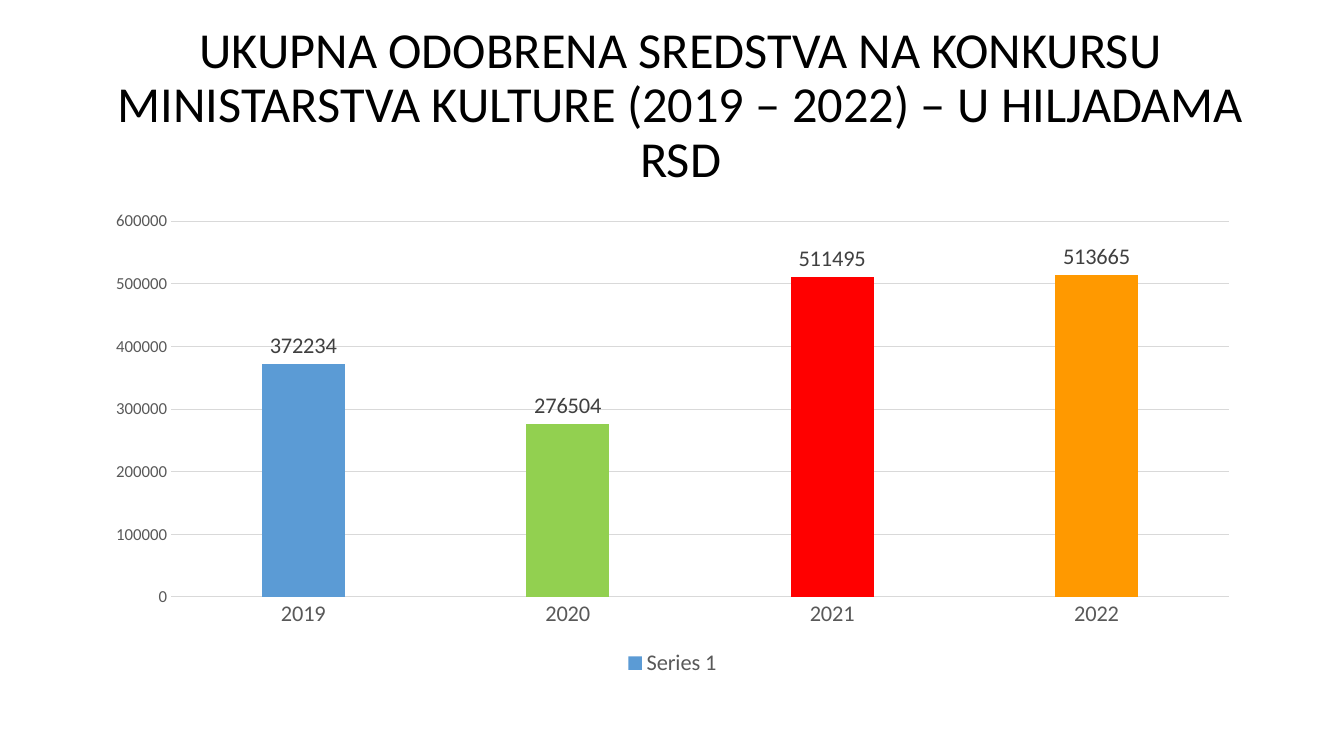
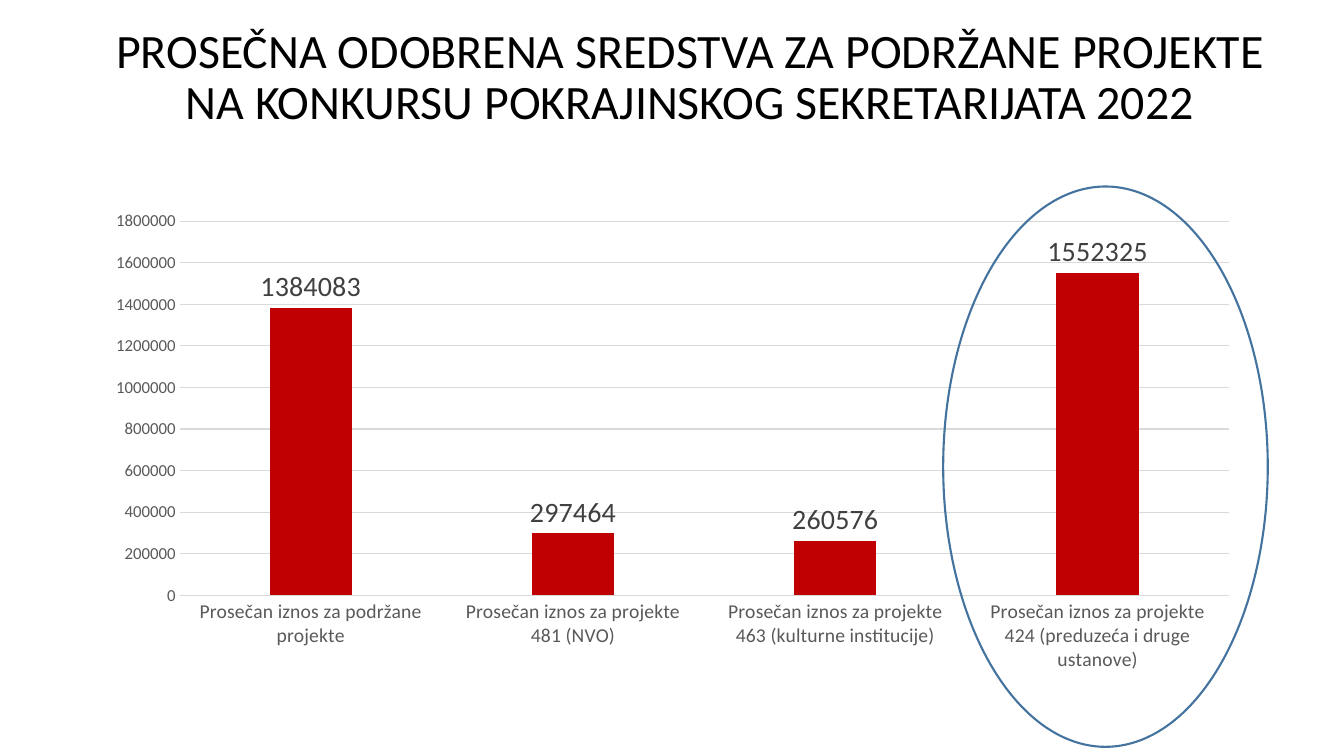
from dataclasses import dataclass

from pptx import Presentation
from pptx.chart.data import CategoryChartData
from pptx.dml.color import RGBColor
from pptx.enum.chart import XL_CHART_TYPE, XL_LABEL_POSITION, XL_LEGEND_POSITION, XL_TICK_MARK
from pptx.enum.shapes import MSO_SHAPE
from pptx.enum.text import MSO_ANCHOR, PP_ALIGN
from pptx.util import Cm, Pt

COLUMN = XL_CHART_TYPE.COLUMN_CLUSTERED
OUTSIDE_END = XL_LABEL_POSITION.OUTSIDE_END
LEGEND_BOTTOM = XL_LEGEND_POSITION.BOTTOM
NO_TICK = XL_TICK_MARK.NONE
OVAL = MSO_SHAPE.OVAL
MIDDLE = MSO_ANCHOR.MIDDLE
CENTER = PP_ALIGN.CENTER


@dataclass(frozen=True)
class Theme:
    font: str = "Calibri"
    text: str = "000000"
    axis: str = "595959"
    label: str = "404040"
    grid: str = "D9D9D9"
    outline: str = "43739E"
    blue: str = "5B9BD5"
    green: str = "92D050"
    red: str = "FF0000"
    orange: str = "FF9900"
    dark_red: str = "C00000"
    total_title_size: float = 36
    average_title_size: float = 34.2
    base_size: float = 10
    value_size: float = 12
    category_size: float = 14
    year_size: float = 16
    large_label_size: float = 20


THEME = Theme()
CHART_BOX = (2.34, 5.08, 29.21, 12.09)


def place(box):
    return [Cm(n) for n in box]


def rgb(color):
    return RGBColor.from_string(color)


def style_font(font, size, color):
    font.name = THEME.font
    font.size = Pt(size)
    font.color.rgb = rgb(color)


def style_line(line, color, width):
    line.color.rgb = rgb(color)
    line.width = Pt(width)


def paint(fill, color):
    fill.solid()
    fill.fore_color.rgb = rgb(color)


def add_title(s, text, box, size):
    tf = s.shapes.add_textbox(*place(box)).text_frame
    tf.word_wrap = True
    tf.vertical_anchor = MIDDLE
    p = tf.paragraphs[0]
    p.text = text
    p.alignment = CENTER
    p.line_spacing = 0.9
    style_font(p.font, size, THEME.text)


def style_axes(chart, category_size):
    categories, values = chart.category_axis, chart.value_axis
    for axis, size in ((categories, category_size), (values, THEME.value_size)):
        axis.major_tick_mark = axis.minor_tick_mark = NO_TICK
        style_font(axis.tick_labels.font, size, THEME.axis)
    style_line(categories.format.line, THEME.grid, 0.75)
    values.format.line.fill.background()
    values.has_major_gridlines = True
    style_line(values.major_gridlines.format.line, THEME.grid, 0.75)


def add_column_chart(s, columns, color, category_size, label_size, point_colors=()):
    data = CategoryChartData()
    data.categories = list(columns)
    data.add_series("Series 1", list(columns.values()))
    chart = s.shapes.add_chart(COLUMN, *place(CHART_BOX), data).chart
    chart.has_title = False
    chart.has_legend = False
    style_font(chart.font, THEME.base_size, THEME.text)
    style_axes(chart, category_size)

    plot = chart.plots[0]
    plot.gap_width = 219
    plot.overlap = -27
    plot.vary_by_categories = False
    series = plot.series[0]
    paint(series.format.fill, color)
    for i, point_color in enumerate(point_colors, 1):
        paint(series.points[i].format.fill, point_color)

    labels = series.data_labels
    labels.show_value = True
    labels.position = OUTSIDE_END
    style_font(labels.font, label_size, THEME.label)
    return chart


def add_legend(chart):
    chart.has_legend = True
    chart.legend.position = LEGEND_BOTTOM
    chart.legend.include_in_layout = False
    style_font(chart.legend.font, THEME.year_size, THEME.axis)


def add_ring(s, box):
    sp = s.shapes.add_shape(OVAL, *place(box))
    sp.shadow.inherit = False
    sp.fill.background()
    style_line(sp.line, THEME.outline, 1.5)


def build_totals(s):
    add_title(
        s,
        "UKUPNA ODOBRENA SREDSTVA NA KONKURSU MINISTARSTVA KULTURE (2019 – 2022) – U HILJADAMA RSD",
        (1.57, 1.02, 31.17, 3.33),
        THEME.total_title_size,
    )
    totals = {"2019": 372234, "2020": 276504, "2021": 511495, "2022": 513665}
    chart = add_column_chart(
        s, totals, THEME.blue, THEME.year_size, THEME.year_size,
        (THEME.green, THEME.red, THEME.orange),
    )
    add_legend(chart)


def build_averages(s):
    add_title(
        s,
        "PROSEČNA ODOBRENA SREDSTVA ZA PODRŽANE PROJEKTE NA KONKURSU POKRAJINSKOG SEKRETARIJATA 2022",
        (2.34, 0.71, 30.1, 2.54),
        THEME.average_title_size,
    )
    averages = {
        "Prosečan iznos za podržane projekte": 1384083,
        "Prosečan iznos za projekte 481 (NVO)": 297464,
        "Prosečan iznos za projekte 463 (kulturne institucije)": 260576,
        "Prosečan iznos za projekte 424 (preduzeća i druge ustanove)": 1552325,
    }
    add_column_chart(s, averages, THEME.dark_red, THEME.category_size, THEME.large_label_size)
    add_ring(s, (23.77, 4.7, 8.18, 14.12))


def main():
    prs = Presentation()
    prs.slide_width, prs.slide_height = Cm(33.87), Cm(19.05)
    blank = prs.slide_layouts[6]
    for build in (build_totals, build_averages):
        build(prs.slides.add_slide(blank))
    prs.save("out.pptx")


if __name__ == "__main__":
    main()
